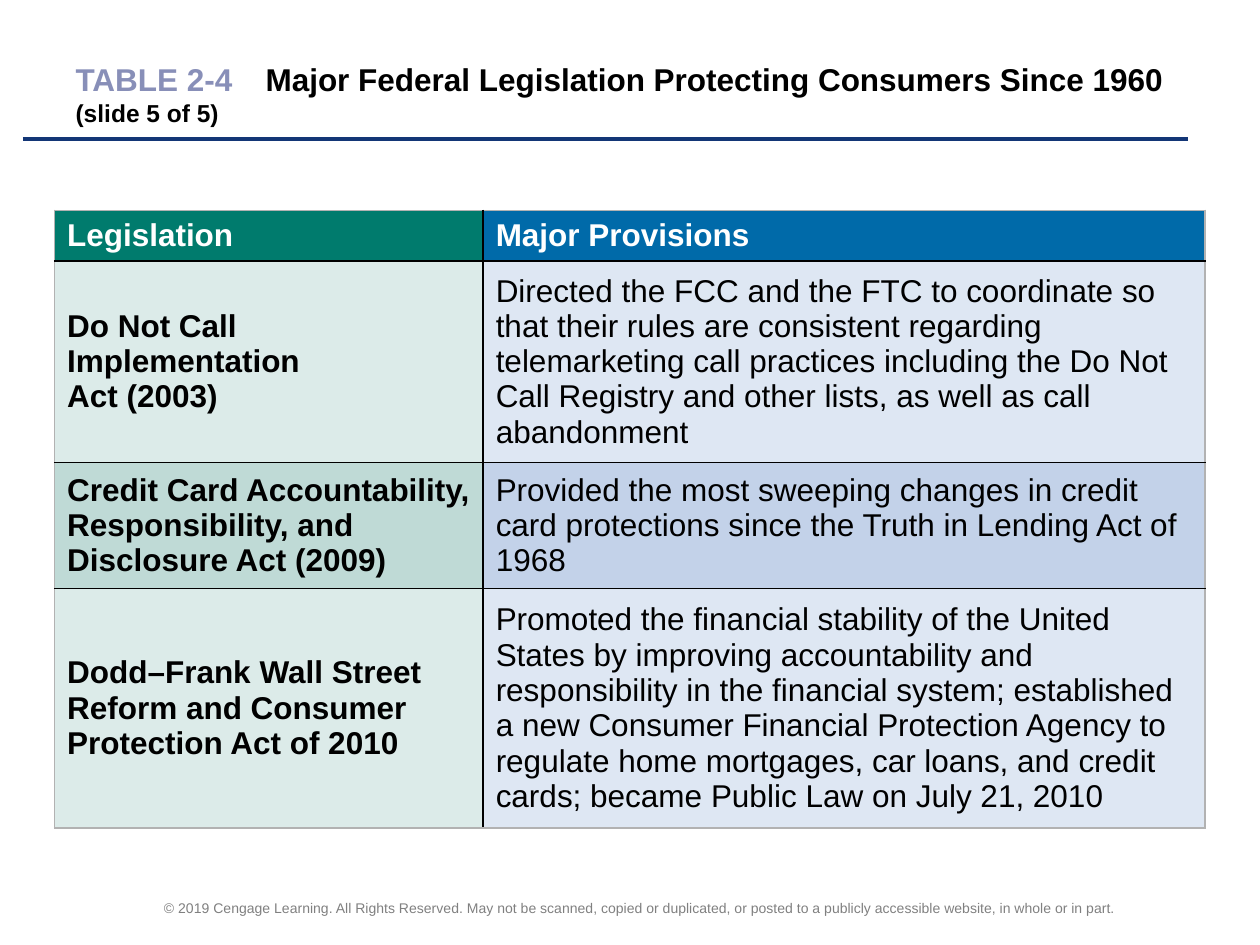
from lxml import etree
from pptx import Presentation
from pptx.dml.color import RGBColor
from pptx.enum.shapes import MSO_CONNECTOR
from pptx.enum.text import MSO_ANCHOR, MSO_AUTO_SIZE, PP_ALIGN
from pptx.oxml.ns import qn
from pptx.util import Cm, Pt

STRAIGHT = MSO_CONNECTOR.STRAIGHT
MIDDLE = MSO_ANCHOR.MIDDLE
NO_AUTOFIT = MSO_AUTO_SIZE.NONE
LEFT, CENTER = PP_ALIGN.LEFT, PP_ALIGN.CENTER

BLACK = RGBColor(0x00, 0x00, 0x00)
WHITE = RGBColor(0xFF, 0xFF, 0xFF)
GREY = RGBColor(0x80, 0x80, 0x80)
EDGE_GREY = RGBColor(0xB2, 0xB2, 0xB2)
NAVY = RGBColor(0x13, 0x36, 0x76)
LAVENDER = RGBColor(0x88, 0x8F, 0xB8)
HEADER_FILLS = (RGBColor(0x00, 0x7B, 0x6D), RGBColor(0x00, 0x6A, 0xA9))
BAND_FILLS = (
    (RGBColor(0xDC, 0xEB, 0xE9), RGBColor(0xDE, 0xE7, 0xF3)),
    (RGBColor(0xBF, 0xDA, 0xD6), RGBColor(0xC3, 0xD2, 0xE9)),
)

COLUMN_WIDTHS = (8.64, 14.55)
ROW_HEIGHTS = (0.66, 1.55, 1.55, 1.98)
TABLE_HEIGHT = 12.45
LEGISLATION = (
    (("Legislation",), ("Major Provisions",)),
    (
        ("Do Not Call Implementation", "Act (2003)"),
        ("Directed the FCC and the FTC to coordinate so that their rules are "
         "consistent regarding telemarketing call practices including the Do Not "
         "Call Registry and other lists, as well as call abandonment",),
    ),
    (
        ("Credit Card Accountability,", "Responsibility, and Disclosure Act (2009)"),
        ("Provided the most sweeping changes in credit card protections since the "
         "Truth in Lending Act of 1968",),
    ),
    (
        ("Dodd–Frank Wall Street Reform and Consumer Protection Act of 2010",),
        ("Promoted the financial stability of the United States by improving "
         "accountability and responsibility in the financial system; established a "
         "new Consumer Financial Protection Agency to regulate home mortgages, car "
         "loans, and credit cards; became Public Law on July 21, 2010",),
    ),
)
COPYRIGHT = (
    "© 2019 Cengage Learning. All Rights Reserved. May not be scanned, copied or "
    "duplicated, or posted to a publicly accessible website, in whole or in part."
)


def add_text(paragraph, text, size=18, color=BLACK, bold=False, font="Arial"):
    """Append a formatted run to a paragraph."""
    run = paragraph.add_run()
    run.text = text
    run.font.name = font
    run.font.size = Pt(size)
    run.font.bold = bold
    run.font.color.rgb = color


def add_border(cell, side, color, width):
    """Draw one side of a table cell."""
    properties = cell._tc.get_or_add_tcPr()
    line = etree.SubElement(properties, qn(f"a:ln{side}"), w=str(Pt(width)))
    fill = etree.SubElement(line, qn("a:solidFill"))
    etree.SubElement(fill, qn("a:srgbClr"), val=str(color))


class SlideBuilder:
    """Hold the current slide and build its elements in one style."""

    def __init__(self, presentation):
        self.slide = presentation.slides.add_slide(presentation.slide_layouts[5])

    def title(self, label, heading, part):
        """Fill the title placeholder with a label, a heading and a part number."""
        title = self.slide.shapes.title
        title.left, title.top, title.width, title.height = (
            Cm(1.27), Cm(0.94), Cm(22.86), Cm(1.9))
        frame = title.text_frame
        frame.auto_size = NO_AUTOFIT
        frame.word_wrap = True
        frame.vertical_anchor = MIDDLE
        paragraph = frame.paragraphs[0]
        paragraph.alignment = LEFT
        tabs = etree.SubElement(paragraph._p.get_or_add_pPr(), qn("a:tabLst"))
        etree.SubElement(tabs, qn("a:tab"), pos=str(Cm(3.83)), algn="l")
        add_text(paragraph, label, color=LAVENDER, bold=True)
        add_text(paragraph, f"\t{heading} ", bold=True)
        add_text(paragraph, part, size=14, bold=True)

    def rule(self, left, top, right):
        """Draw the horizontal rule below the title."""
        rule = self.slide.shapes.add_connector(
            STRAIGHT, Cm(left), Cm(top), Cm(right), Cm(top))
        rule.line.color.rgb = NAVY
        rule.line.width = Pt(2.25)
        etree.SubElement(rule._element.spPr, qn("a:effectLst"))

    def footer(self, text):
        """Add the centred copyright line."""
        box = self.slide.shapes.add_textbox(Cm(1.9), Cm(17.98), Cm(22.02), Cm(0.64))
        frame = box.text_frame
        frame.word_wrap = True
        frame.vertical_anchor = MIDDLE
        frame.paragraphs[0].alignment = CENTER
        add_text(frame.paragraphs[0], text, size=8, color=GREY)

    def table(self, rows, left, top):
        """Add the table with a coloured header and banded rows."""
        shape = self.slide.shapes.add_table(
            len(rows), len(COLUMN_WIDTHS), Cm(left), Cm(top),
            Cm(sum(COLUMN_WIDTHS)), Cm(TABLE_HEIGHT))
        table = shape.table
        table.first_row = table.horz_banding = False
        for column, width in zip(table.columns, COLUMN_WIDTHS):
            column.width = Cm(width)
        for row, height in zip(table.rows, ROW_HEIGHTS):
            row.height = Cm(height)
        shape.height = Cm(TABLE_HEIGHT)
        for row_index, row in enumerate(rows):
            for column_index, lines in enumerate(row):
                self.cell(table, row_index, column_index, lines)

    def cell(self, table, row, column, lines):
        """Border, fill and write one table cell."""
        cell = table.cell(row, column)
        outer_sides = {
            "L": column == 0,
            "R": column == len(table.columns) - 1,
            "T": row == 0,
            "B": row == len(table.rows) - 1,
        }
        for side, is_outer in outer_sides.items():
            add_border(cell, side, EDGE_GREY if is_outer else BLACK, 1)
        is_header = row == 0
        fills = HEADER_FILLS if is_header else BAND_FILLS[(row - 1) % 2]
        cell.fill.solid()
        cell.fill.fore_color.rgb = fills[column]
        cell.vertical_anchor = MIDDLE
        frame = cell.text_frame
        for index, line in enumerate(lines):
            paragraph = frame.add_paragraph() if index else frame.paragraphs[0]
            add_text(paragraph, line, color=WHITE if is_header else BLACK,
                     bold=is_header or column == 0)


def main():
    """Build and save the presentation."""
    presentation = Presentation()
    presentation.slide_width, presentation.slide_height = Cm(25.4), Cm(19.05)
    builder = SlideBuilder(presentation)
    builder.footer(COPYRIGHT)
    builder.rule(0.46, 2.81, 23.95)
    builder.title("TABLE 2-4", "Major Federal Legislation Protecting Consumers Since 1960",
                  "(slide 5 of 5)")
    builder.table(LEGISLATION, 1.1, 4.24)
    presentation.save("out.pptx")


if __name__ == "__main__":
    main()
